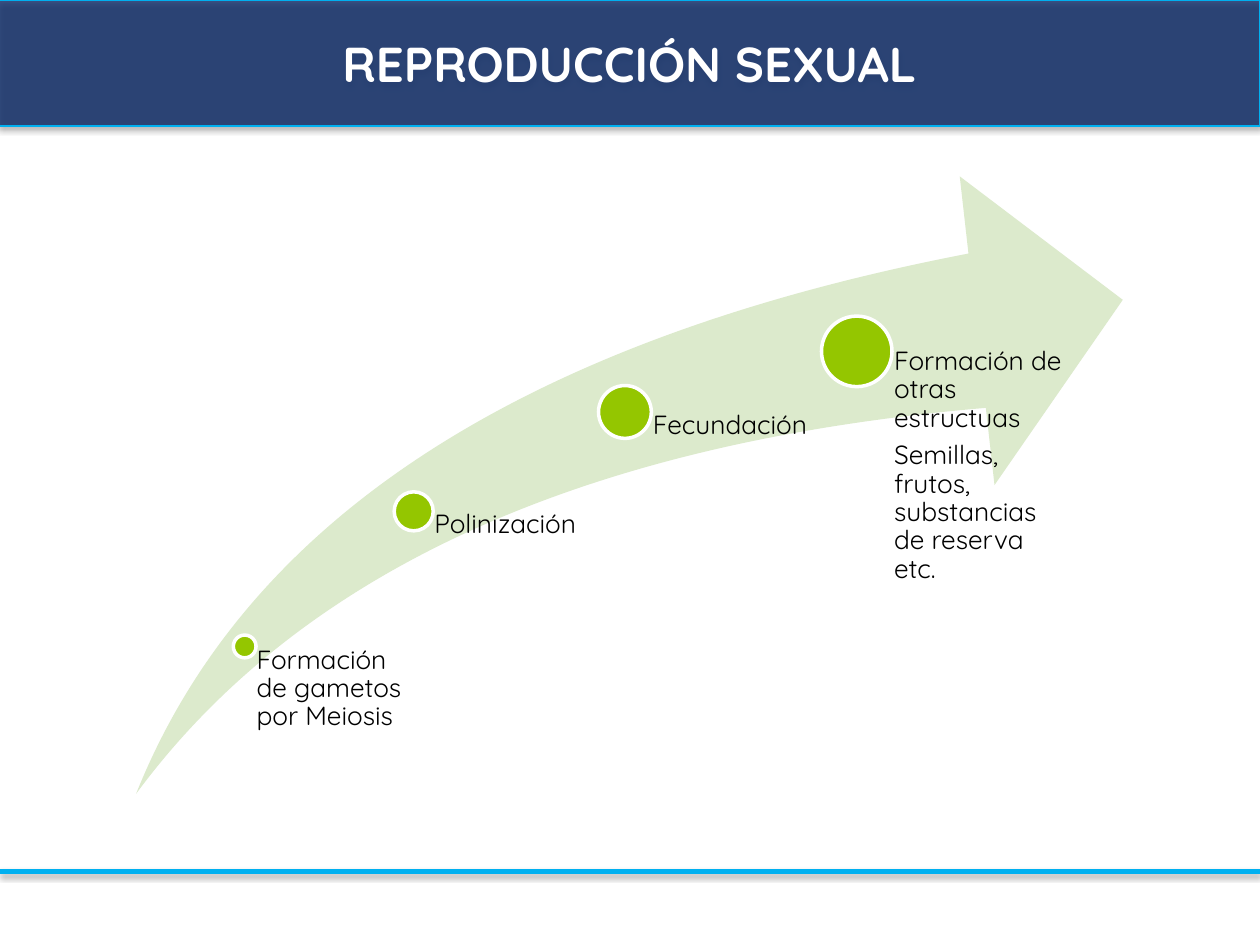
"""Build a slide on the stages of sexual reproduction along a rising arrow."""
from lxml import etree
from pptx import Presentation
from pptx.dml.color import RGBColor
from pptx.enum import shapes, text
from pptx.oxml import ns
from pptx.util import Pt

TITLE = "REPRODUCCIÓN SEXUAL"
FONT = "Quicksand"
NAVY, SKY, PALE, GREEN = "002060", "00B0F0", "DCEACC", "94C600"
WHITE, BLACK = "FFFFFF", "000000"
BASE = 453.6
# centre x, centre y, diameter, text top, text width, paragraphs
STAGES = [
    (139.8, 369.4, 13, 369.4, 96.5, ["Formación de gametos por Meiosis"]),
    (236.4, 292.2, 22.3, 292.2, 118.8, ["Polinización"]),
    (357.1, 235.4, 30.2, 235.4, 118.8, ["Fecundación"]),
    (489.6, 200.8, 40.3, 198.7, 118.8, [
        "Formación de otras estructuas",
        "Semillas, frutos, substancias de reserva etc."]),
]
GEOM = shapes.MSO_SHAPE


def color(code):
    return RGBColor.from_string(code)


def node(up, tag, **attrs):
    return etree.SubElement(up, ns.qn("a:" + tag), attrs)


def shade(item):
    props = item.element.spPr
    for old in props.findall(ns.qn("a:effectLst")):
        props.remove(old)
    drop = node(node(props, "effectLst"), "outerShdw", blurRad=str(Pt(3.1)),
                dist=str(Pt(1.8)), dir="5400000", rotWithShape="0")
    node(node(drop, "srgbClr", val=BLACK), "alpha", val="35000")


def draw(home, kind, box, fill, line=None, width=0):
    item = home.add_shape(kind, *map(Pt, box))
    item.shadow.inherit = False
    item.fill.solid()
    item.fill.fore_color.rgb = color(fill)
    if line:
        item.line.color.rgb = color(line)
        item.line.width = Pt(width)
    else:
        item.line.fill.background()
    return item


def write(item, paras, size=15, tint=BLACK, bold=False, align="LEFT",
          anchor="TOP", inset=None, space=None, after=0):
    frame = item.text_frame
    frame.word_wrap = True
    frame.vertical_anchor = getattr(text.MSO_ANCHOR, anchor)
    if inset is not None:
        frame.margin_left = Pt(inset)
        frame.margin_top = frame.margin_right = frame.margin_bottom = 0
    for i, words in enumerate(paras):
        para = frame.add_paragraph() if i else frame.paragraphs[0]
        para.alignment = getattr(text.PP_ALIGN, align)
        para.line_spacing = space
        para.space_after = Pt(after)
        run = para.add_run()
        run.text = words
        run.font.name, run.font.size, run.font.bold = FONT, Pt(size), bold
        run.font.color.rgb = color(tint)


def main():
    deck = Presentation()
    deck.slide_width, deck.slide_height = Pt(720), Pt(540)
    page = deck.slides.add_slide(deck.slide_layouts[6]).shapes

    band = draw(page, GEOM.RECTANGLE, (-0.7, 0, 720.7, 72), NAVY, SKY, 0.75)
    tone = band.element.spPr.find(ns.qn("a:solidFill"))[0]
    node(tone, "alpha", val="77000")
    shade(band)
    write(band, [TITLE], size=28, tint=WHITE, bold=True, align="CENTER",
          anchor="MIDDLE")

    rule = page.add_connector(shapes.MSO_CONNECTOR.STRAIGHT,
                              Pt(0), Pt(498.2), Pt(720), Pt(498.2))
    rule.line.color.rgb = color(SKY)
    rule.line.width = Pt(3)
    shade(rule)

    group = page.add_group_shape().shapes
    arrow = draw(group, GEOM.SWOOSH_ARROW, (77.8, 100.8, 563.8, 352.8), PALE)
    arrow.adjustments[0] = arrow.adjustments[1] = 0.25
    for x, y, size, top, width, paras in STAGES:
        draw(group, GEOM.OVAL, (x - size / 2, y - size / 2, size, size),
             GREEN, WHITE, 2)
        label = group.add_textbox(Pt(x), Pt(top), Pt(width), Pt(BASE - top))
        write(label, paras, inset=size * 0.53, space=0.9, after=5.25)

    deck.save("out.pptx")


if __name__ == "__main__":
    main()
